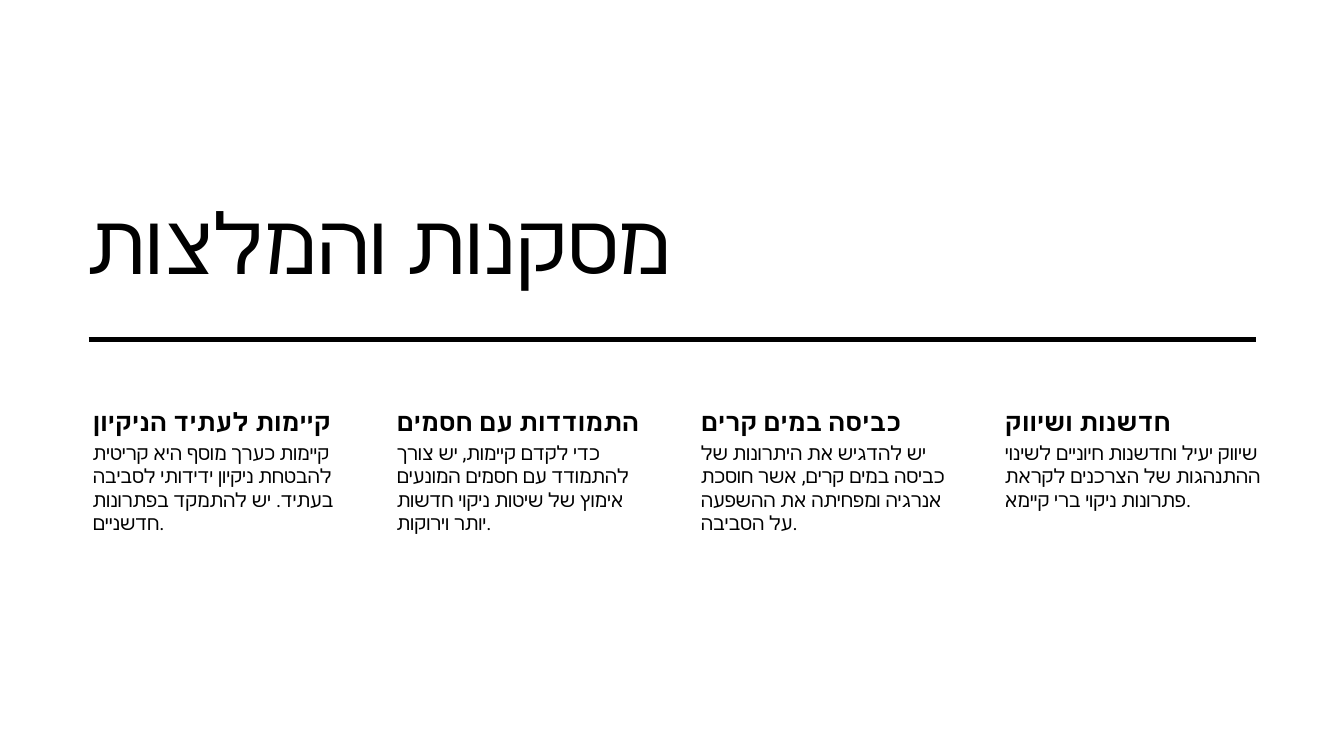
from dataclasses import dataclass

from lxml import etree
from pptx import Presentation
from pptx.dml.color import RGBColor
from pptx.enum.shapes import MSO_CONNECTOR
from pptx.enum.text import MSO_ANCHOR, MSO_AUTO_SIZE, PP_ALIGN
from pptx.oxml.ns import qn
from pptx.util import Pt

STRAIGHT = MSO_CONNECTOR.STRAIGHT
TOP, BOTTOM = MSO_ANCHOR.TOP, MSO_ANCHOR.BOTTOM
NO_AUTOFIT = MSO_AUTO_SIZE.NONE
LEFT = PP_ALIGN.LEFT

# Content
TITLE = "מסקנות והמלצות"
COLUMNS = [
    ("קיימות לעתיד הניקיון",
     "קיימות כערך מוסף היא קריטית להבטחת ניקיון ידידותי לסביבה בעתיד. יש להתמקד בפתרונות חדשניים."),
    ("התמודדות עם חסמים",
     "כדי לקדם קיימות, יש צורך להתמודד עם חסמים המונעים אימוץ של שיטות ניקוי חדשות יותר וירוקות."),
    ("כביסה במים קרים",
     "יש להדגיש את היתרונות של כביסה במים קרים, אשר חוסכת אנרגיה ומפחיתה את ההשפעה על הסביבה."),
    ("חדשנות ושיווק",
     "שיווק יעיל וחדשנות חיוניים לשינוי ההתנהגות של הצרכנים לקראת פתרונות ניקוי ברי קיימא."),
]


@dataclass(frozen=True)
class Theme:
    ink: RGBColor = RGBColor(0, 0, 0)
    paper: RGBColor = RGBColor(255, 255, 255)
    title_font: str = "Roboto Condensed"
    body_font: str = "Roboto"
    title_size: float = 60
    heading_size: float = 18
    body_size: float = 14
    rule_width: float = 3.5


THEME = Theme()

# Layout in points
SLIDE_SIZE = (960, 540)
TITLE_BOX = (55.44, 100.8, 629.28, 110.88)
RULE_LEFT, RULE_RIGHT, RULE_TOP = 63.36, 897.12, 242.64
COLUMN_LEFT, COLUMN_TOP, COLUMN_WIDTH, COLUMN_STEP = 55.44, 288, 197.28, 217.2
HEADING_HEIGHT, BODY_HEIGHT = 25.2, 168.48


def place(shape, left, top, width, height):
    shape.left, shape.top = Pt(left), Pt(top)
    shape.width, shape.height = Pt(width), Pt(height)


def write(shape, text, font_name, size, bold=False, anchor=TOP):
    """Fill a text shape with one left-aligned paragraph."""
    frame = shape.text_frame
    frame.word_wrap = True
    frame.auto_size = NO_AUTOFIT
    frame.vertical_anchor = anchor
    paragraph = frame.paragraphs[0]
    paragraph.text = text
    paragraph.alignment = LEFT
    font = paragraph.font
    font.name, font.size, font.bold = font_name, Pt(size), bold
    font.color.rgb = THEME.ink
    # Hebrew takes its typeface from the complex-script entry
    properties = paragraph._p.pPr.find(qn("a:defRPr"))
    etree.SubElement(properties, qn("a:cs")).set("typeface", font_name)
    return paragraph


def add_column_text(group, box, text, size, inset, bold=False):
    shape = group.shapes.add_textbox(*map(Pt, box))
    frame = shape.text_frame
    frame.margin_left = Pt(10.8)
    frame.margin_top = frame.margin_right = frame.margin_bottom = Pt(inset)
    write(shape, text, THEME.body_font, size, bold)


def main():
    presentation = Presentation()
    presentation.slide_width, presentation.slide_height = map(Pt, SLIDE_SIZE)
    slide = presentation.slides.add_slide(presentation.slide_layouts[5])
    slide.background.fill.solid()
    slide.background.fill.fore_color.rgb = THEME.paper

    # Title
    title = slide.shapes.title
    place(title, *TITLE_BOX)
    paragraph = write(title, TITLE, THEME.title_font, THEME.title_size, anchor=BOTTOM)
    paragraph.line_spacing = 1.0
    paragraph._p.pPr.find(qn("a:defRPr")).set("spc", "30")

    # Rule under the title
    rule = slide.shapes.add_connector(
        STRAIGHT, Pt(RULE_LEFT), Pt(RULE_TOP), Pt(RULE_RIGHT), Pt(RULE_TOP))
    rule.line.color.rgb = THEME.ink
    rule.line.width = Pt(THEME.rule_width)
    etree.SubElement(rule._element.spPr, qn("a:effectLst"))

    # Four columns, each a heading over its text
    for index, (heading, body) in enumerate(COLUMNS):
        left = COLUMN_LEFT + index * COLUMN_STEP
        group = slide.shapes.add_group_shape()
        add_column_text(group, (left, COLUMN_TOP, COLUMN_WIDTH, HEADING_HEIGHT),
                        heading, THEME.heading_size, 2.16, bold=True)
        add_column_text(group, (left, COLUMN_TOP + HEADING_HEIGHT, COLUMN_WIDTH, BODY_HEIGHT),
                        body, THEME.body_size, 1.44)

    presentation.save("out.pptx")


if __name__ == "__main__":
    main()
